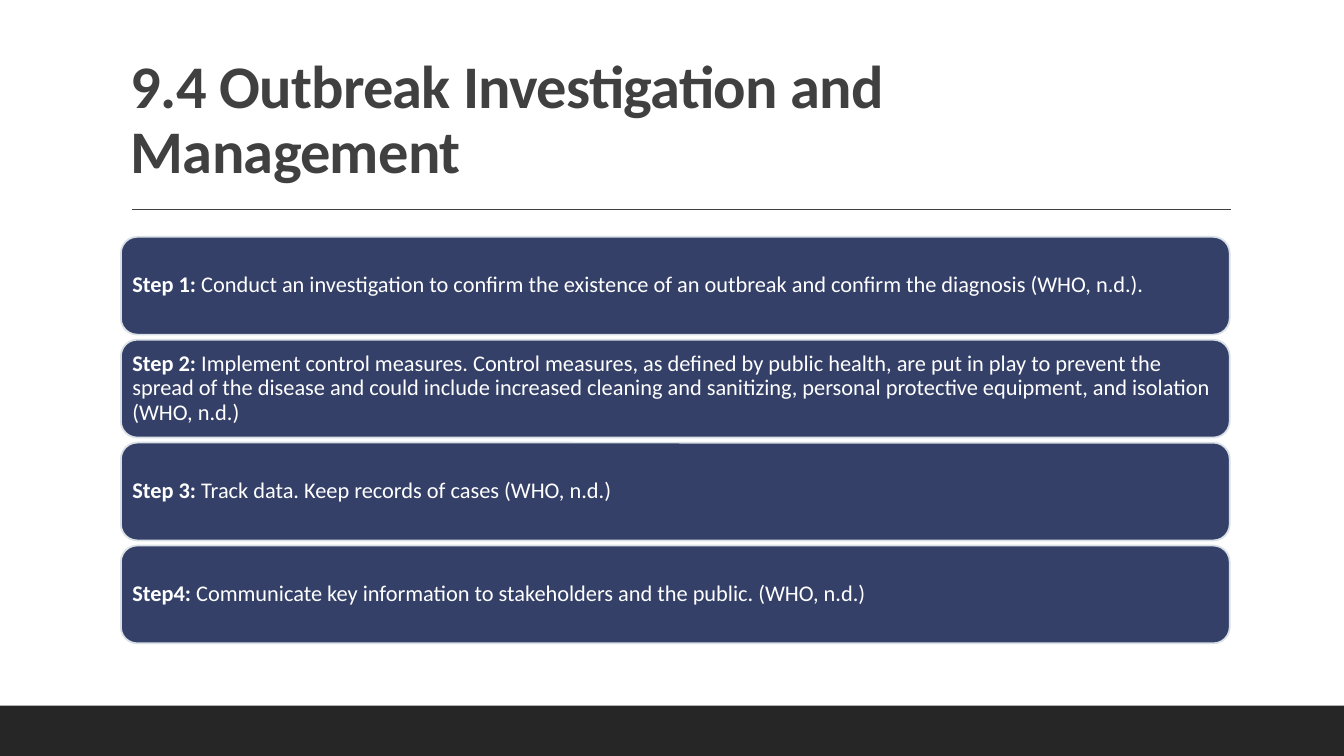
from lxml import etree
from pptx import Presentation, util as u
from pptx.dml.color import RGBColor
from pptx.enum import shapes, text
from pptx.oxml.ns import qn

COLORS = {"bar": "262626", "ink": "404040", "step": "344068",
          "edge": "D9E0E6", "white": "FFFFFF"}

STEPS = [
    ("Step 1:", " Conduct an investigation to confirm the existence of an outbreak "
                "and confirm the diagnosis (WHO, n.d.)."),
    ("Step 2:", " Implement control measures. Control measures, as defined by public "
                "health, are put in play to prevent the spread of the disease and could "
                "include increased cleaning and sanitizing, personal protective "
                "equipment, and isolation (WHO, n.d.)"),
    ("Step 3:", " Track data. Keep records of cases (WHO, n.d.)"),
    ("Step4:", " Communicate key information to stakeholders and the public. (WHO, n.d.)"),
]

LEFT, WIDTH = 86.4, 792
STEP_TOP, STEP_HEIGHT, STEP_PITCH = 169.2, 69.84, 73.5


def color(name):
    return RGBColor.from_string(COLORS[name])


def set_all(target, values):
    for name, value in values.items():
        setattr(target, name, value)


def add_panel(page, kind, left, top, width, height, fill, edge=None):
    panel = page.shapes.add_shape(kind, u.Pt(left), u.Pt(top), u.Pt(width), u.Pt(height))
    panel.shadow.inherit = False
    panel.fill.solid()
    panel.fill.fore_color.rgb = color(fill)
    if edge:
        panel.line.color.rgb = color(edge)
        panel.line.width = u.Pt(1.25)
    else:
        panel.line.fill.background()
    return panel


def write(box, spans, size, ink, frame_format):
    """Fill a box with one left-aligned paragraph of (words, bold) spans."""
    set_all(box.text_frame, {"word_wrap": True, **frame_format})
    para = box.text_frame.paragraphs[0]
    set_all(para, {"alignment": text.PP_ALIGN.LEFT, "line_spacing": 0.9})
    for words, bold in spans:
        span = para.add_run()
        span.text = words
        set_all(span.font, {"name": "Calibri", "size": u.Pt(size), "bold": bold})
        span.font.color.rgb = color(ink)
    return para


def add_title(page, words):
    box = page.shapes.add_textbox(u.Pt(LEFT), u.Pt(22.3), u.Pt(WIDTH), u.Pt(114.5))
    para = write(box, [(words, True)], 43.2, "ink",
                 {"vertical_anchor": text.MSO_ANCHOR.BOTTOM, "margin_right": u.Pt(14)})
    # Slightly tightened letter spacing
    para.runs[0].font._element.set("spc", "-50")


def add_rule(page, left, right, top):
    rule = page.shapes.add_connector(shapes.MSO_CONNECTOR.STRAIGHT,
                                     u.Pt(left), u.Pt(top), u.Pt(right), u.Pt(top))
    rule.line.color.rgb = color("ink")
    rule.line.width = u.Pt(1)
    etree.SubElement(rule._element.spPr, qn("a:effectLst"))


def add_step(page, top, label, words):
    panel = add_panel(page, shapes.MSO_SHAPE.ROUNDED_RECTANGLE,
                      LEFT, top, WIDTH, STEP_HEIGHT, "step", "edge")
    margins = {f"margin_{side}": u.Pt(4.8) for side in ("left", "top", "right", "bottom")}
    write(panel, [(label, True), (words, False)], 16, "white",
          {"vertical_anchor": text.MSO_ANCHOR.MIDDLE, **margins})


def main():
    deck = Presentation()
    set_all(deck, {"slide_width": u.Pt(960), "slide_height": u.Pt(540)})
    page = deck.slides.add_slide(deck.slide_layouts[6])

    # Footer bar, title and rule
    add_panel(page, shapes.MSO_SHAPE.RECTANGLE, 0, 504, 960, 36, "bar")
    add_rule(page, 94.3, 879.1, 149.6)
    add_title(page, "9.4 Outbreak Investigation and Management")

    # Stack of steps
    for index, (label, words) in enumerate(STEPS):
        add_step(page, STEP_TOP + index * STEP_PITCH, label, words)

    deck.save("out.pptx")


if __name__ == "__main__":
    main()
